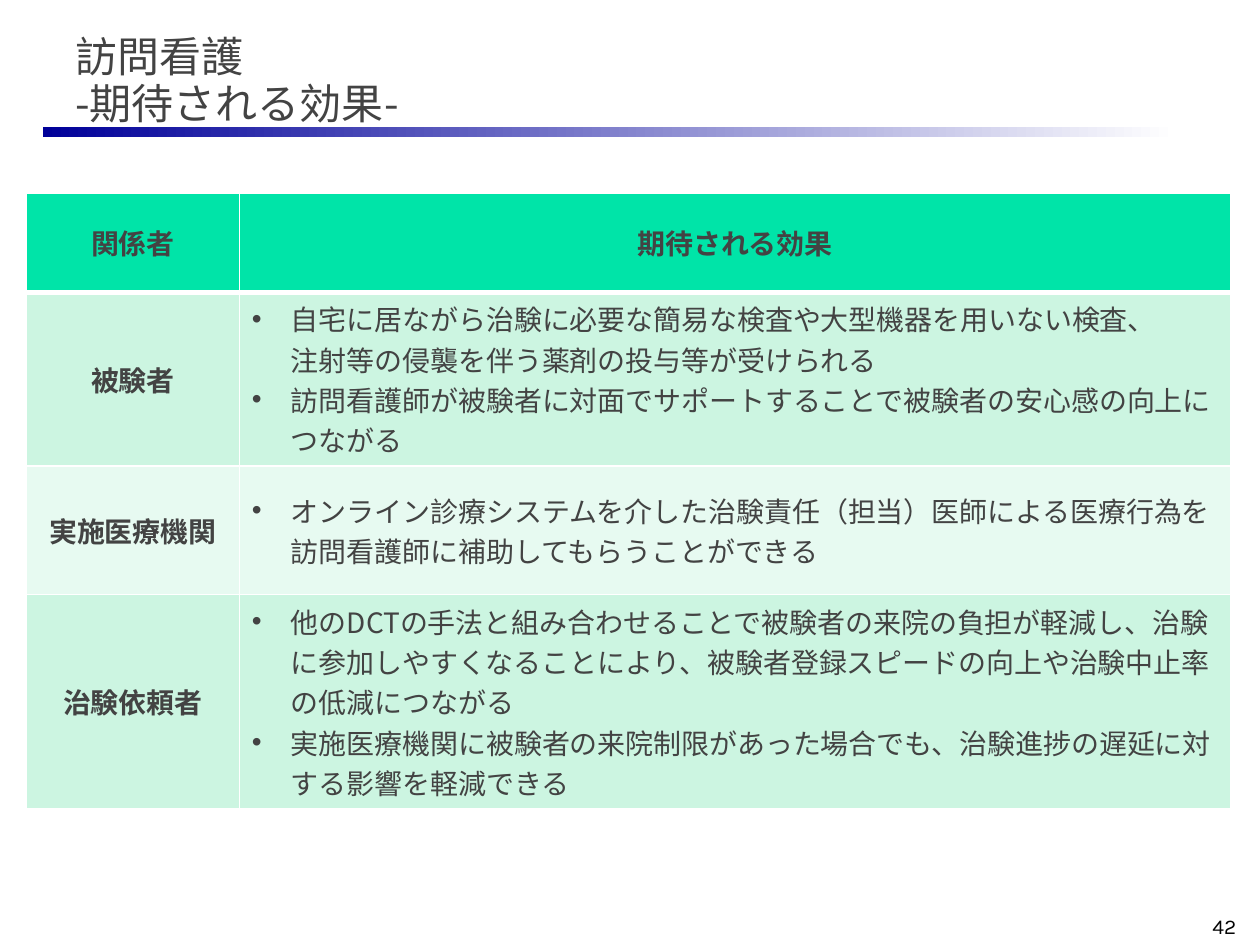
import pptx
import pptx.dml.color
import pptx.enum.shapes
import pptx.enum.text
import pptx.oxml.ns
import pptx.util
from lxml import etree
from pptx.util import Inches

FONT = "Noto Sans CJK JP"
TEXT = "434343"
COLUMN_WIDTHS = [1.69, 7.87]
ROW_HEIGHTS = [0.79, 1.38, 1.02, 1.7]
HEADERS = ["関係者", "期待される効果"]
HEADER_FILL = "00E4A8"
BAND_FILLS = ["CCF5E1", "E7FAF1"]
EFFECTS = [
    ("被験者", [
        "自宅に居ながら治験に必要な簡易な検査や大型機器を用いない検査、\n"
        "注射等の侵襲を伴う薬剤の投与等が受けられる",
        "訪問看護師が被験者に対面でサポートすることで被験者の安心感の向上につながる",
    ]),
    ("実施医療機関", [
        "オンライン診療システムを介した治験責任（担当）医師による医療行為を"
        "訪問看護師に補助してもらうことができる",
    ]),
    ("治験依頼者", [
        "他のDCTの手法と組み合わせることで被験者の来院の負担が軽減し、"
        "治験に参加しやすくなることにより、被験者登録スピードの向上や"
        "治験中止率の低減につながる",
        "実施医療機関に被験者の来院制限があった場合でも、"
        "治験進捗の遅延に対する影響を軽減できる",
    ]),
]


def color(value):
    """Return the colour for a hex string."""
    return pptx.dml.color.RGBColor.from_string(value)


def add_element(parent, tag, **attributes):
    """Append a DrawingML element to its parent and return it."""
    return etree.SubElement(parent, pptx.oxml.ns.qn(tag), attributes)


def write_paragraph(para, text, size, font=FONT, fill=TEXT, bold=False):
    """Put text in a paragraph and format its runs."""
    para.text = text
    for span in para.runs:
        span.font.size = pptx.util.Pt(size)
        span.font.name = font
        span.font.bold = bold
        span.font.color.rgb = color(fill)
        add_element(span.font._element, "a:ea", typeface=font)


def add_text(page, text, left, top, width, height, size, **style):
    """Add a bottom-anchored text box and return its paragraph."""
    box = page.shapes.add_textbox(Inches(left), Inches(top), Inches(width), Inches(height))
    box.text_frame.word_wrap = True
    box.text_frame.vertical_anchor = pptx.enum.text.MSO_ANCHOR.BOTTOM
    para = box.text_frame.paragraphs[0]
    write_paragraph(para, text, size, **style)
    return para


def add_title_rule(page):
    """Add the bar under the title that fades to white."""
    bar = page.shapes.add_shape(
        pptx.enum.shapes.MSO_SHAPE.RECTANGLE, Inches(0.34), Inches(1.01), Inches(9), Inches(0.08))
    bar.shadow.inherit = False
    bar.line.fill.background()
    bar.fill.gradient()
    bar.fill.gradient_angle = 0
    for stop, position, value in zip(bar.fill.gradient_stops, [0, 1], ["000099", "FFFFFF"]):
        stop.position = position
        stop.color.rgb = color(value)


def style_cell(cell, fill, top=1, bottom=1):
    """Give a cell white borders, a fill and middle anchoring."""
    properties = cell._tc.get_or_add_tcPr()
    for side, points in [("L", 1), ("R", 1), ("T", top), ("B", bottom)]:
        line = add_element(properties, f"a:ln{side}", w=str(pptx.util.Pt(points)))
        add_element(add_element(line, "a:solidFill"), "a:srgbClr", val="FFFFFF")
    cell.fill.solid()
    cell.fill.fore_color.rgb = color(fill)
    cell.vertical_anchor = pptx.enum.text.MSO_ANCHOR.MIDDLE


def write_heading(cell, text):
    """Write a bold centred heading in a cell."""
    para = cell.text_frame.paragraphs[0]
    write_paragraph(para, text, 16, bold=True)
    para.alignment = pptx.enum.text.PP_ALIGN.CENTER


def write_bullets(cell, items):
    """Write a bulleted list in a cell."""
    frame = cell.text_frame
    for index, item in enumerate(items):
        para = frame.add_paragraph() if index else frame.paragraphs[0]
        write_paragraph(para, item, 16)
        properties = para._p.get_or_add_pPr()
        properties.set("marL", str(Inches(0.31)))
        properties.set("indent", str(Inches(-0.31)))
        add_element(properties, "a:buFont", typeface="Arial")
        add_element(properties, "a:buChar", char="•")


def add_effects_table(page):
    """Add the table of expected effects for each party."""
    table = page.shapes.add_table(
        len(ROW_HEIGHTS), len(COLUMN_WIDTHS), Inches(0.21), Inches(1.53),
        Inches(sum(COLUMN_WIDTHS)), Inches(sum(ROW_HEIGHTS))).table
    for column, width in zip(table.columns, COLUMN_WIDTHS):
        column.width = Inches(width)
    for row, height in zip(table.rows, ROW_HEIGHTS):
        row.height = Inches(height)
    for cell, header in zip(table.rows[0].cells, HEADERS):
        style_cell(cell, HEADER_FILL, bottom=3)
        write_heading(cell, header)
    for index, (party, items) in enumerate(EFFECTS):
        cells = table.rows[index + 1].cells
        for cell in cells:
            style_cell(cell, BAND_FILLS[index % 2], top=1 if index else 3)
        write_heading(cells[0], party)
        write_bullets(cells[1], items)


def main():
    """Build the slide and save it."""
    deck = pptx.Presentation()
    deck.slide_width = Inches(10)
    deck.slide_height = Inches(7.5)
    page = deck.slides.add_slide(deck.slide_layouts[6])
    add_title_rule(page)
    title = add_text(page, "訪問看護\n-期待される効果-", 0.5, 0.17, 8.52, 0.9, 24)
    title.line_spacing = 0.92
    number = add_text(page, "42", 7.83, 7.17, 2.08, 0.33, 12, font="Karla", fill="040404")
    number.alignment = pptx.enum.text.PP_ALIGN.RIGHT
    add_effects_table(page)
    deck.save("out.pptx")


if __name__ == "__main__":
    main()
